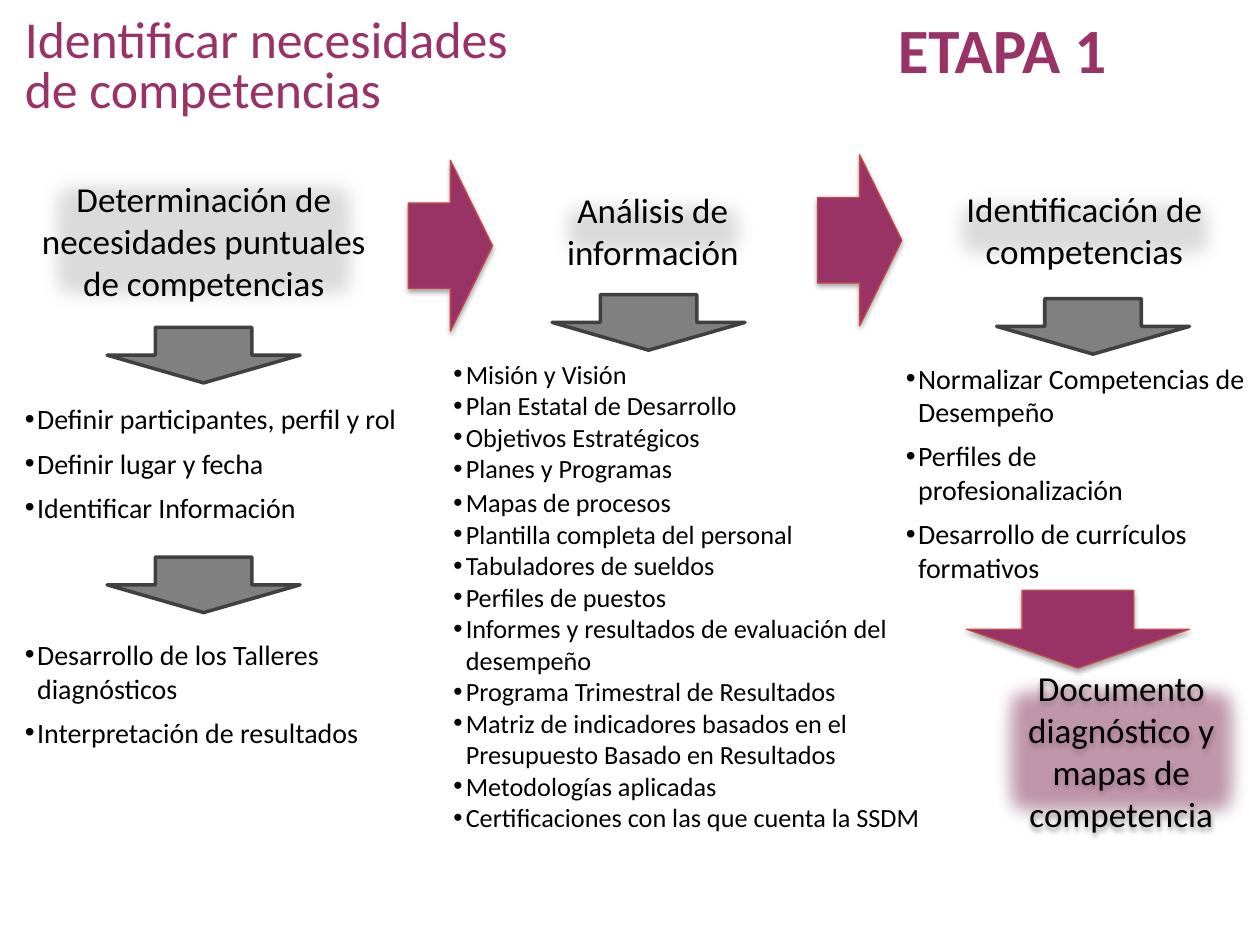
from lxml.etree import SubElement
from pptx import Presentation
from pptx.dml.color import RGBColor
from pptx.enum.shapes import MSO_SHAPE as Shape
from pptx.enum.text import MSO_ANCHOR as Anchor, PP_ALIGN as Align
from pptx.oxml.ns import qn
from pptx.util import Cm, Pt

COLORS = {
    "plum": "993366", "red": "BF4C48", "silver": "A6A6A6",
    "gray": "808080", "dark": "404040", "black": "000000",
}
FONT = "Calibri"
COLUMNS_TOP = 3.2


def rgb(name):
    return RGBColor.from_string(COLORS[name])


def place(origin, box):
    return Cm(origin[0] + box[0]), Cm(origin[1] + box[1]), Cm(box[2]), Cm(box[3])


def style(paragraph, size, color="black", bold=False):
    font = paragraph.font
    font.name, font.size, font.bold = FONT, Pt(size), bold
    font.color.rgb = rgb(color)


def add_effects(shape, shadow_alpha=None, soft_edge=None):
    shape.shadow.inherit = False
    effects = shape._element.spPr.find(qn("a:effectLst"))
    if shadow_alpha:
        shadow = SubElement(effects, qn("a:outerShdw"), blurRad=str(Pt(3.1)),
                            dist=str(Pt(1.7)), dir="5400000", rotWithShape="0")
        tint = SubElement(shadow, qn("a:srgbClr"), val=COLORS["black"])
        SubElement(tint, qn("a:alpha"), val=str(shadow_alpha * 1000))
    if soft_edge:
        SubElement(effects, qn("a:softEdge"), rad=str(Pt(soft_edge)))


def add_arrow(slide, kind, area, fill, line, width, shadow_alpha=None):
    arrow = slide.shapes.add_shape(kind, *area)
    arrow.fill.solid()
    arrow.fill.fore_color.rgb = rgb(fill)
    arrow.line.color.rgb = rgb(line)
    arrow.line.width = Pt(width)
    add_effects(arrow, shadow_alpha)
    return arrow


def add_stage_arrow(slide, area):
    return add_arrow(slide, Shape.RIGHT_ARROW, area, "plum", "red", 0.75, 35)


def add_card(slide, area, text, fill, shadow_alpha=None):
    card = slide.shapes.add_shape(Shape.RECTANGLE, *area)
    card.fill.solid()
    card.fill.fore_color.rgb = rgb(fill)
    tint = card._element.spPr.find(qn("a:solidFill"))[0]
    SubElement(tint, qn("a:alpha"), val="40000")
    card.line.fill.background()
    add_effects(card, shadow_alpha, soft_edge=12.5)
    frame = card.text_frame
    frame.word_wrap = True
    frame.vertical_anchor = Anchor.MIDDLE
    paragraph = frame.paragraphs[0]
    paragraph.text = text
    paragraph.alignment = Align.CENTER
    style(paragraph, 20)


def add_bullets(slide, area, items, size, gap):
    frame = slide.shapes.add_textbox(*area).text_frame
    frame.word_wrap = True
    for index, item in enumerate(items):
        paragraph = frame.add_paragraph() if index else frame.paragraphs[0]
        paragraph.text = item
        if index and gap:
            paragraph.space_before = Pt(gap)
        properties = paragraph._p.get_or_add_pPr()
        properties.set("marL", str(Cm(0.25)))
        properties.set("indent", str(-Cm(0.25)))
        SubElement(properties, qn("a:buFont"), typeface="Arial")
        SubElement(properties, qn("a:buChar"), char="•")
        style(paragraph, size)


def add_header(slide, title_box, heading_box):
    stage = slide.shapes.title
    stage.left, stage.top, stage.width, stage.height = place((0, 0), title_box)
    heading = slide.shapes.add_textbox(*place((0, 0), heading_box))
    for part, text, anchor, align, size, bold in (
        (stage, "ETAPA 1", Anchor.TOP, Align.RIGHT, 36, True),
        (heading, "Identificar necesidades de competencias",
         Anchor.MIDDLE, Align.LEFT, 29.6, False),
    ):
        frame = part.text_frame
        frame.word_wrap = True
        frame.vertical_anchor = anchor
        paragraph = frame.paragraphs[0]
        paragraph.text = text
        paragraph.alignment = align
        paragraph.line_spacing = 0.8
        style(paragraph, size, "plum", bold)


def add_column(slide, left, card_box, card_text, arrows, lists, size=16, gap=6):
    origin = (left, COLUMNS_TOP)
    add_card(slide, place(origin, card_box), card_text, "silver")
    for box, items in lists:
        add_bullets(slide, place(origin, box), items, size, gap)
    for x, y in arrows:
        add_arrow(slide, Shape.DOWN_ARROW, place(origin, (x, y, 3.89, 1.12)),
                  "gray", "dark", 2)


def add_outcome(slide, origin):
    span, depth = 4.5, 1.57
    shift = (span - depth) / 2
    arrow = add_stage_arrow(slide, place(origin, (shift, -shift, depth, span)))
    arrow.rotation = 90
    add_card(slide, place(origin, (0.33, 1.46, 5.59, 3.53)),
             "Documento diagnóstico y mapas de competencia", "plum", 38)


def main():
    deck = Presentation()
    deck.slide_width, deck.slide_height = Cm(25.4), Cm(19.05)
    slide = deck.slides.add_slide(deck.slide_layouts[5])

    add_header(slide, (17.15, 0.38, 5.41, 2.82), (0.25, 0.05, 10.9, 2.67))
    add_column(
        slide, 8.89, (1.96, 0.41, 4.62, 2.06), "Análisis de información",
        [(2.24, 2.74)],
        [((0, 3.89, 6.81, 2.82), (
            "Misión y Visión", "Plan Estatal de Desarrollo",
            "Objetivos Estratégicos", "Planes y Programas")),
         ((0, 6.48, 9.96, 6.1), (
             "Mapas de procesos", "Plantilla completa del personal",
             "Tabuladores de sueldos", "Perfiles de puestos",
             "Informes y resultados de evaluación del desempeño",
             "Programa Trimestral de Resultados",
             "Matriz de indicadores basados en el Presupuesto Basado en Resultados",
             "Metodologías aplicadas",
             "Certificaciones con las que cuenta la SSDM"))],
        size=15, gap=0)
    add_column(
        slide, 0.25, (0.33, 0, 7.06, 3.3),
        "Determinación de necesidades puntuales de competencias",
        [(1.91, 3.4), (1.91, 8.03)],
        [((0, 4.78, 8.26, 2.74), (
            "Definir participantes, perfil y rol", "Definir lugar y fecha",
            "Identificar Información")),
         ((0, 9.53, 7.39, 2.62), (
             "Desarrollo de los Talleres diagnósticos",
             "Interpretación de resultados"))])
    add_column(
        slide, 18.01, (0.79, 0.36, 6.12, 2.13), "Identificación de competencias",
        [(2.08, 2.82)],
        [((0, 3.96, 7.39, 5.69), (
            "Normalizar Competencias de Desempeño",
            "Perfiles de profesionalización",
            "Desarrollo de currículos formativos"))])
    add_outcome(slide, (19.48, 11.9))
    for origin in ((8.23, 3.23), (16.48, 3.12)):
        add_stage_arrow(slide, place(origin, (0, 0, 1.7, 3.45)))

    deck.save("out.pptx")


if __name__ == "__main__":
    main()
